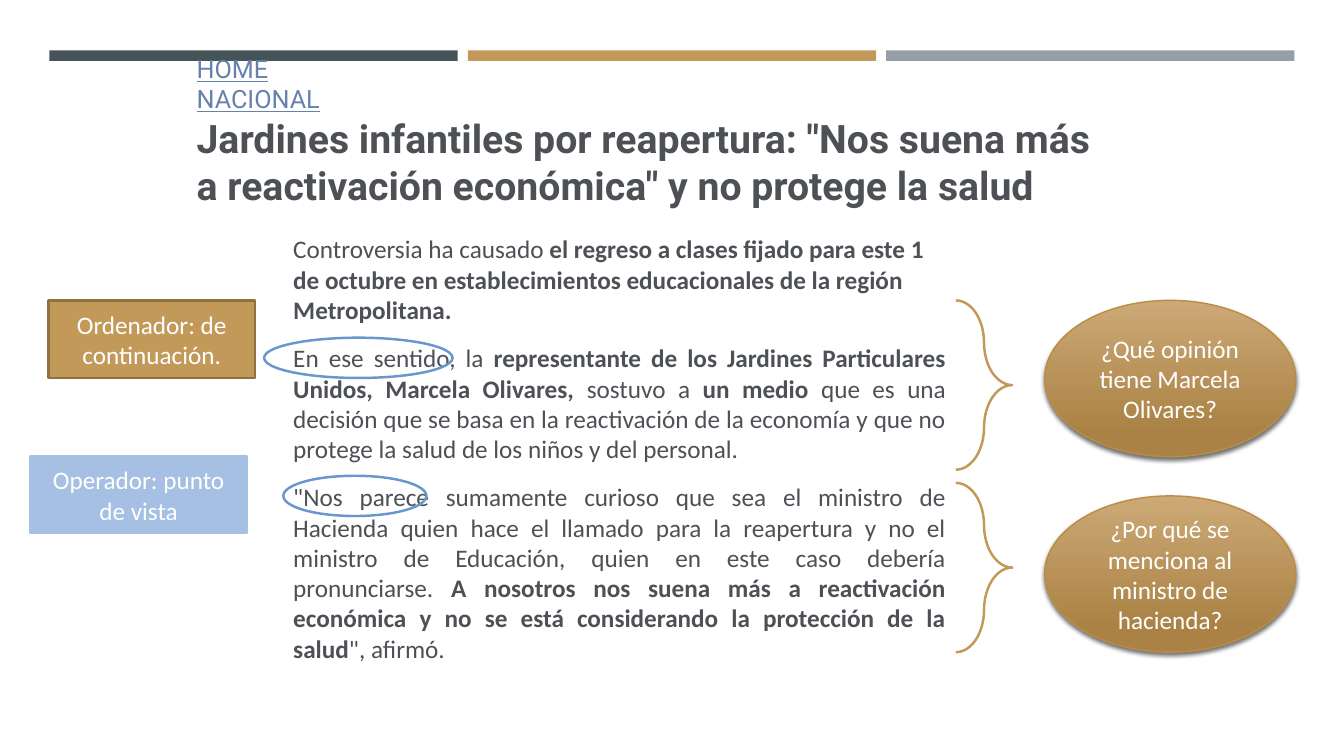
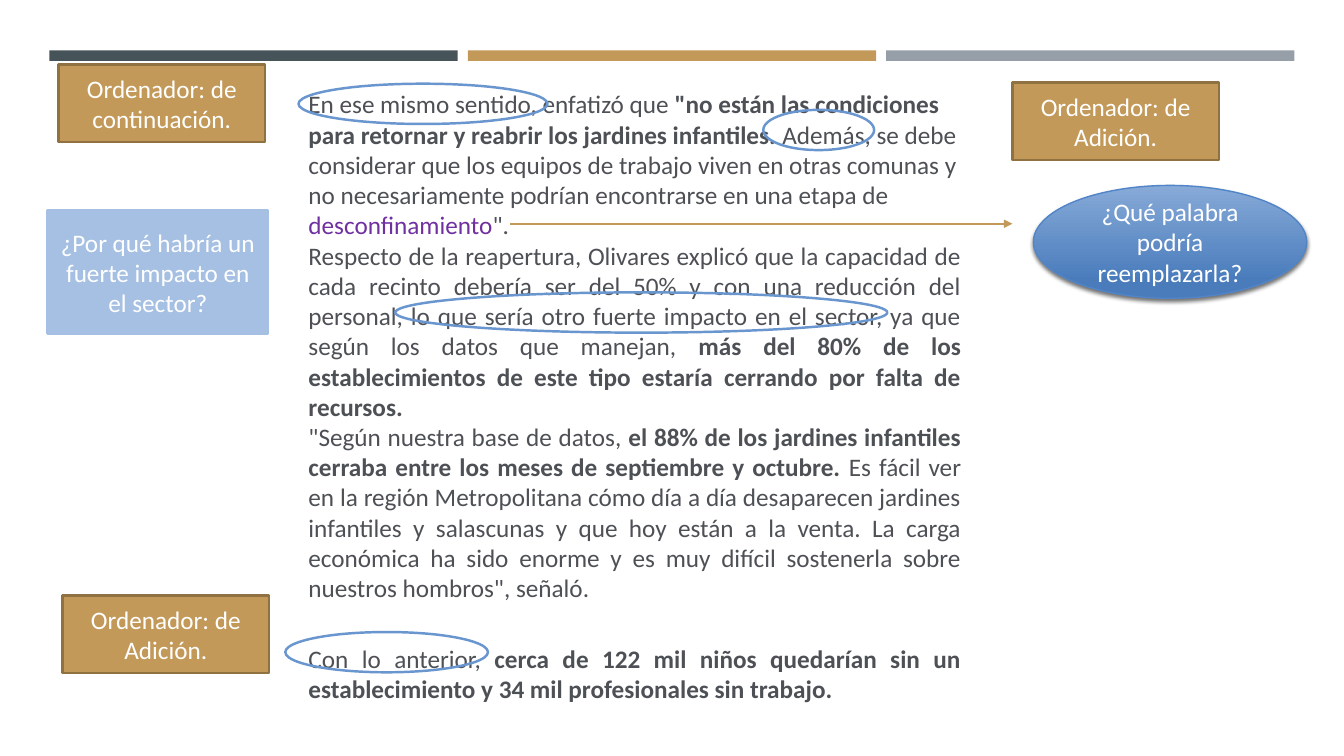
import lxml.etree
import pptx
import pptx.dml.color
import pptx.enum.dml
import pptx.enum.shapes
import pptx.enum.text
import pptx.oxml
import pptx.oxml.ns
import pptx.util

SLIDE_WIDTH = pptx.util.Inches(13.33)
SLIDE_HEIGHT = pptx.util.Inches(7.5)

INK, WHITE = "4D5055", "FFFFFF"
GOLD, GOLD_EDGE = "C39959", "907142"
PALE_BLUE, RING_BLUE = "A5C0E2", "6996CF"
BAND_COLORS = ("465359", GOLD, "969FA7")
GOLD_OVAL = ("CCA976", "AA8245", "BB8C44")
BLUE_OVAL = ("87AAD8", "4A7CBC", "5185C7")

# Lengths are percentages of the slide's width or height.
TEXT_WIDTH = 50.04
RING_HEIGHT = 5.33
LABEL_SIZE = (15.38, 10.27)
BRACE_SIZE = (4.2, 22.4)
BRACE_LEFT = 71.12
OVAL_SIZE = (18.68, 20.67)
OVAL_LEFT = 77.72
FIRST_ROW = 39.73

SHAPES = pptx.enum.shapes.MSO_SHAPE
ALIGN = pptx.enum.text.PP_ALIGN
BOLD = {"bold": True}
BREADCRUMB = {"font": "Roboto", "color": "6682AC", "underline": True}
HEADLINE = {"font": "Roboto", "size": 28, "bold": True}


def rgb(value):
    return pptx.dml.color.RGBColor.from_string(value)


def across(share):
    return round(SLIDE_WIDTH * share / 100)


def down(share):
    return round(SLIDE_HEIGHT * share / 100)


def box(left, top, width, height):
    return across(left), down(top), across(width), down(height)


def write(paragraph, text, size=18, font="Calibri", color=INK, bold=False, underline=False):
    run = paragraph.add_run()
    run.text = text
    run.font.size = pptx.util.Pt(size)
    run.font.name = font
    run.font.color.rgb = rgb(color)
    run.font.bold = bold
    run.font.underline = underline


def write_paragraphs(frame, paragraphs):
    """Fill a frame from (alignment, [(text, format), ...]) pairs."""
    frame.word_wrap = True
    for index, (alignment, runs) in enumerate(paragraphs):
        paragraph = frame.add_paragraph() if index else frame.paragraphs[0]
        paragraph.alignment = alignment
        for text, style in runs:
            write(paragraph, text, **style)


def add_passage(slide, left, top, height, paragraphs):
    passage = slide.shapes.add_textbox(*box(left, top, TEXT_WIDTH, height))
    write_paragraphs(passage.text_frame, paragraphs)


def add_figure(slide, preset, place, fill=None, line=None, line_width=1.75):
    figure = slide.shapes.add_shape(preset, *box(*place))
    figure.shadow.inherit = False
    if fill:
        figure.fill.solid()
        figure.fill.fore_color.rgb = rgb(fill)
    else:
        figure.fill.background()
    if line:
        figure.line.color.rgb = rgb(line)
        figure.line.width = pptx.util.Pt(line_width)
    else:
        figure.line.fill.background()
    return figure


def caption(figure, text):
    figure.text_frame.vertical_anchor = pptx.enum.text.MSO_ANCHOR.MIDDLE
    write_paragraphs(figure.text_frame, [(ALIGN.CENTER, [(text, {"color": WHITE})])])


def add_label(slide, left, top, text, size=LABEL_SIZE, fill=GOLD, line=GOLD_EDGE):
    caption(add_figure(slide, SHAPES.RECTANGLE, (left, top, *size), fill, line), text)


def add_ring(slide, left, top, width):
    """Circle a phrase of the passage."""
    add_figure(slide, SHAPES.OVAL, (left, top, width, RING_HEIGHT), line=RING_BLUE)


def add_brace(slide, top):
    brace = add_figure(slide, SHAPES.RIGHT_BRACE, (BRACE_LEFT, top, *BRACE_SIZE), line=GOLD)
    brace.adjustments[0] = 0.75


def add_question(slide, place, text, colors):
    """Add a shaded oval; colors are its top, bottom and edge."""
    top_color, bottom_color, edge = colors
    question = add_figure(slide, SHAPES.OVAL, place, line=edge, line_width=1)
    question.fill.gradient()
    question.fill.gradient_angle = 270
    stops = question.fill.gradient_stops
    for stop, color, position in zip(stops, (top_color, bottom_color), (0, 0.84)):
        stop.color.rgb = rgb(color)
        stop.position = position
    effects = question.element.spPr.find(pptx.oxml.ns.qn("a:effectLst"))
    effects.append(pptx.oxml.parse_xml(
        f'<a:outerShdw {pptx.oxml.ns.nsdecls("a")} blurRad="38100" dist="25400" '
        'dir="5400000" rotWithShape="0"><a:srgbClr val="000000">'
        '<a:alpha val="55000"/></a:srgbClr></a:outerShdw>'))
    caption(question, text)


def add_arrow(slide, left, right, top):
    arrow = slide.shapes.add_connector(
        pptx.enum.shapes.MSO_CONNECTOR.STRAIGHT,
        across(left), down(top), across(right), down(top))
    arrow.line.color.rgb = rgb(GOLD)
    arrow.line.width = pptx.util.Pt(1.75)
    qn = pptx.oxml.ns.qn
    lxml.etree.SubElement(arrow.line._get_or_add_ln(), qn("a:tailEnd"), type="triangle")
    lxml.etree.SubElement(arrow.element.spPr, qn("a:effectLst"))


def add_master_bands(deck, slide):
    """Draw the three bands and move them to the master, so every slide shows them."""
    for column, color in enumerate(BAND_COLORS):
        place = (3.68 + 31.13 * column, 6.67, 30.38, 1.4)
        band = add_figure(slide, SHAPES.RECTANGLE, place, fill=color)
        deck.slide_master.element.cSld.spTree.append(band.element)


def set_title(slide, paragraphs):
    title = slide.shapes.title
    title.left, title.top, title.width, title.height = box(13.88, 6.4, 69.02, 22)
    title.text_frame.auto_size = pptx.enum.text.MSO_AUTO_SIZE.NONE
    title.text_frame.vertical_anchor = pptx.enum.text.MSO_ANCHOR.TOP
    write_paragraphs(title.text_frame, paragraphs)


def build_opening(slide):
    set_title(slide, [
        (ALIGN.LEFT, [("HOME", BREADCRUMB)]),
        (ALIGN.LEFT, [("NACIONAL", BREADCRUMB)]),
        (ALIGN.LEFT, [('Jardines infantiles por reapertura: "Nos suena más a reactivación '
                       'económica" y no protege la salud', HEADLINE)]),
    ])
    left = 21.08
    add_passage(slide, left, 30.27, 13.47, [(ALIGN.LEFT, [
        ("Controversia ha causado ", {}),
        ("el regreso a clases fijado para este 1 de octubre en establecimientos "
         "educacionales de la región Metropolitana.", BOLD),
    ])])
    add_passage(slide, left, 44.67, 17.47, [(ALIGN.JUSTIFY, [
        ("En ese sentido, la ", {}),
        ("representante de los Jardines Particulares Unidos, Marcela Olivares, ", BOLD),
        ("sostuvo a", {}),
        (" un medio", BOLD),
        (" que es una decisión que se basa en la reactivación de la economía y que no "
         "protege la salud de los niños y del personal.", {}),
    ])])
    add_passage(slide, left, 63.07, 25.6, [(ALIGN.JUSTIFY, [
        ('"Nos parece sumamente curioso que sea el ministro de Hacienda quien hace el '
         "llamado para la reapertura y no el ministro de Educación, quien en este caso "
         "debería pronunciarse. ", {}),
        ("A nosotros nos suena más a reactivación económica y no se está considerando "
         "la protección de la salud", BOLD),
        ('", afirmó.', {}),
    ])])
    add_ring(slide, 19.65, 44.67, 14.03)
    add_ring(slide, left, 62.93, 10.65)
    add_label(slide, 3.6, FIRST_ROW, "Ordenador: de continuación.")
    add_label(slide, 2.25, 60.4, "Operador: punto de vista",
              size=(16.13, 10.13), fill=PALE_BLUE, line=PALE_BLUE)
    for brace_top, oval_top, text in (
        (FIRST_ROW, FIRST_ROW, "¿Qué opinión tiene Marcela Olivares?"),
        (63.87, 65.6, "¿Por qué se menciona al ministro de hacienda?"),
    ):
        add_brace(slide, brace_top)
        add_question(slide, (OVAL_LEFT, oval_top, *OVAL_SIZE), text, GOLD_OVAL)


def build_continuation(slide):
    left = 22.21
    add_passage(slide, left, 11.07, 70, [
        (ALIGN.LEFT, [
            ("En ese mismo sentido, enfatizó que ", {}),
            ('"no están las condiciones para retornar y reabrir los jardines '
             "infantiles.", BOLD),
            (" Además, se debe considerar que los equipos de trabajo viven en otras "
             "comunas y no necesariamente podrían encontrarse en una etapa de ", {}),
            ("desconfinamiento", {"color": "7030A0"}),
            ('".', {}),
        ]),
        (ALIGN.JUSTIFY, [
            ("Respecto de la reapertura, Olivares explicó que la capacidad de cada "
             "recinto debería ser del 50% y con una reducción del personal, lo que sería "
             "otro fuerte impacto en el sector, ya que según los datos que manejan,", {}),
            (" más del 80% de los establecimientos de este tipo estaría cerrando por "
             "falta de recursos.", BOLD),
        ]),
        (ALIGN.JUSTIFY, [
            ('"Según nuestra base de datos,', {}),
            (" el 88% de los jardines infantiles cerraba entre los meses de septiembre "
             "y octubre.", BOLD),
            (" Es fácil ver en la región Metropolitana cómo día a día desaparecen "
             "jardines infantiles y salascunas y que hoy están a la venta. La carga "
             "económica ha sido enorme y es muy difícil sostenerla sobre nuestros "
             'hombros", señaló.', {}),
        ]),
    ])
    add_passage(slide, left, 84.4, 9.47, [(ALIGN.JUSTIFY, [
        ("Con lo anterior,", {}),
        (" cerca de 122 mil niños quedarían sin un establecimiento y 34 mil "
         "profesionales sin trabajo.", BOLD),
    ])])
    for ring in ((left, 11.07, 18.53), (56.79, 14.53, 8.25),
                 (29.41, 38.67, 36.61), (21.23, 83.6, 15.08)):
        add_ring(slide, *ring)
    add_label(slide, 4.35, 8.53, "Ordenador: de continuación.")
    for label_left, label_top in ((75.32, 10.93), (4.65, 78.8)):
        add_label(slide, label_left, label_top, "Ordenador: de Adición.")
    add_label(slide, 3.53, 27.87, "¿Por qué habría un fuerte impacto en el sector?",
              size=(16.43, 16.27), fill=PALE_BLUE, line=PALE_BLUE)
    add_arrow(slide, 37.96, 75.32, 29.6)
    add_question(slide, (76.89, 24.53, 20.33, 14.93),
                 "¿Qué palabra podría reemplazarla?", BLUE_OVAL)


def main():
    deck = pptx.Presentation()
    deck.slide_width, deck.slide_height = SLIDE_WIDTH, SLIDE_HEIGHT
    title_only, blank = deck.slide_layouts[5], deck.slide_layouts[6]
    opening = deck.slides.add_slide(title_only)
    add_master_bands(deck, opening)
    build_opening(opening)
    build_continuation(deck.slides.add_slide(blank))
    deck.save("out.pptx")


if __name__ == "__main__":
    main()
